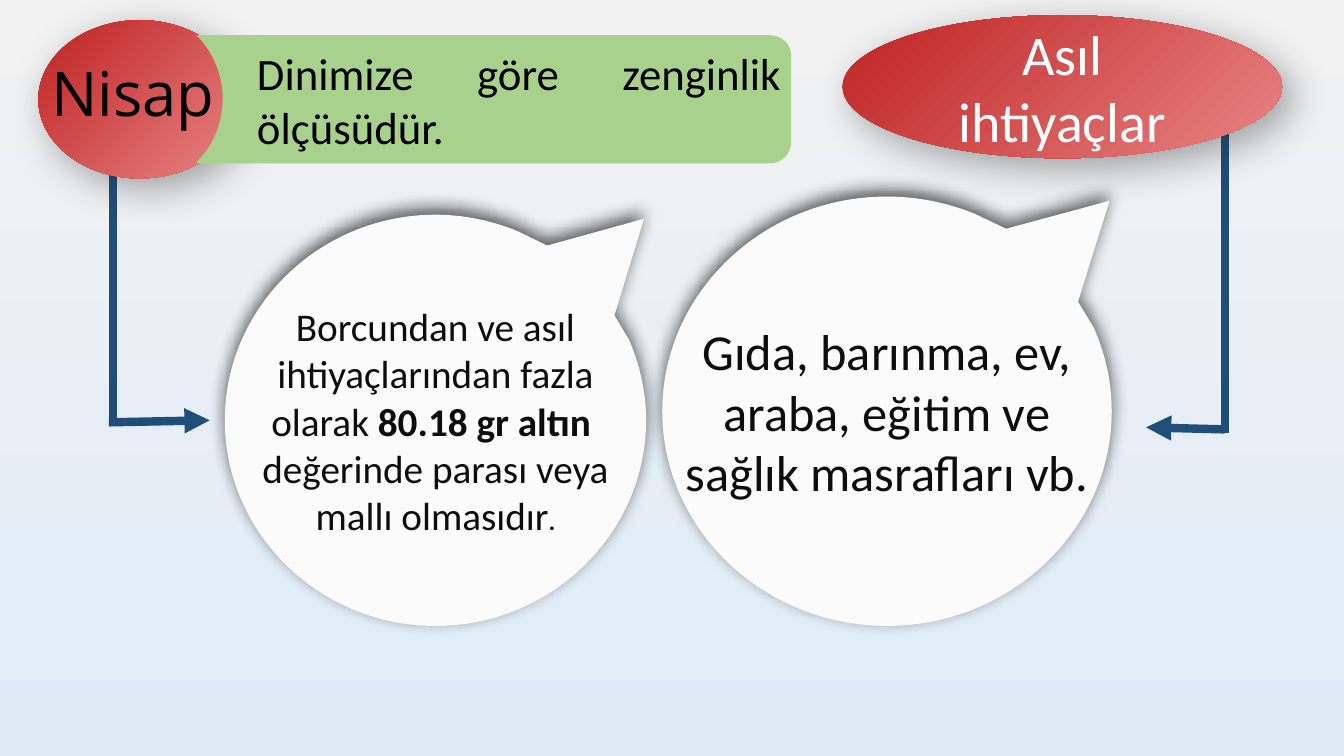
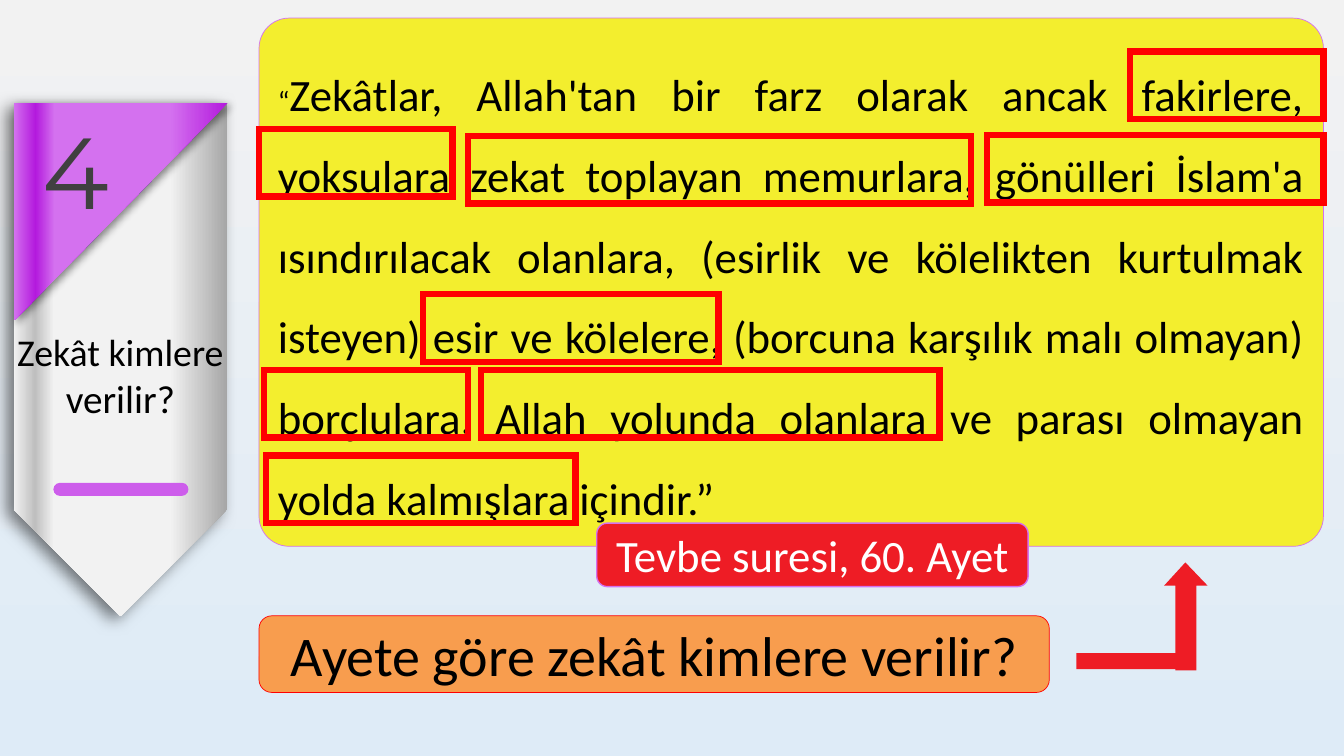
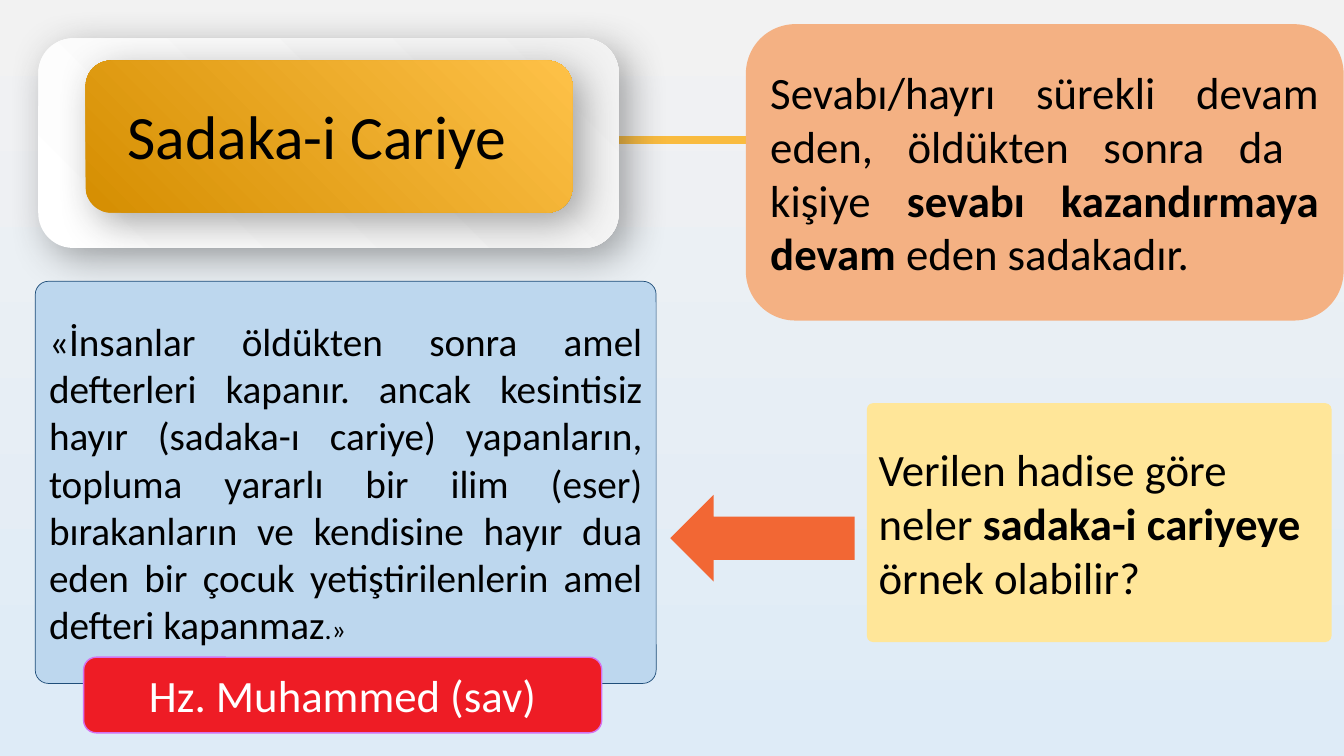
from dataclasses import dataclass

from lxml import etree
from pptx import Presentation
from pptx import util as u
from pptx.dml.color import RGBColor
from pptx.enum import shapes, text
from pptx.oxml import ns

SHAPE = shapes.MSO_SHAPE
ALIGN = text.PP_ALIGN


@dataclass(frozen=True)
class Theme:
    font: str = "Calibri"
    heading_font: str = "Open Sans"
    number_font: str = "Montserrat"
    black: str = "000000"
    white: str = "FFFFFF"
    ink: str = "0D0D0D"
    number: str = "404040"
    navy: str = "1F4E79"
    red: str = "EE1C25"
    highlight: str = "FF0000"
    violet: str = "D471EF"
    dash: str = "CD5DEB"
    balloon: str = "FBFBFB"
    green: str = "A9D18E"
    yellow: str = "F3EE2E"
    orange: str = "F89D4E"
    peach: str = "F4B183"
    blue: str = "BDD7EE"
    cream: str = "FFE699"
    arrow: str = "F26734"
    gold: str = "F9BB3F"
    background: tuple = ((0, "F2F2F2"), (100, "DEEBF7"))
    red_fade: tuple = ((0, "BF2323"), (100, "E88484"))
    white_fade: tuple = ((0, "FFFFFF"), (100, "F2F2F2"))
    gold_fade: tuple = ((0, "D58E01"), (100, "FEC148"))
    silver_fold: tuple = ((0, "A6A6A6"), (27, "F2F2F2"), (81, "F2F2F2"),
                          (90, "BFBFBF"), (100, "F2F2F2"))
    violet_fold: tuple = ((0, "B319DD"), (27, "D471EF"), (81, "D471EF"),
                          (90, "B319DD"), (100, "D471EF"))
    soft_shadow: tuple = ("262626", 40, 28, 10, 45)
    balloon_shadow: tuple = ("000000", 60, 12, 5, 270)
    ribbon_shadow: tuple = ("000000", 50, 12, 6, 150)
    fold_shadow: tuple = ("000000", 46, 6, 3, 45)
    tiny: int = 18
    small: int = 20
    label: int = 27
    body: int = 28
    large: int = 32
    callout: int = 36
    question: int = 40
    title: int = 44
    numeral: int = 72
    thick: float = 6
    frame: float = 4.5


THEME = Theme()


def rgb(color):
    return RGBColor.from_string(color)


def child(parent, tag, **attributes):
    values = {name: str(value) for name, value in attributes.items()}
    return etree.SubElement(parent, ns.qn(tag), values)


def set_gradient(fill, element, stops, angle):
    fill.gradient()
    fill.gradient_angle = angle
    stop_list = element.find(".//" + ns.qn("a:gsLst"))
    for stop in list(stop_list):
        stop_list.remove(stop)
    for position, color in stops:
        stop = child(stop_list, "a:gs", pos=position * 1000)
        child(stop, "a:srgbClr", val=color)


def set_shadow(shape, shadow):
    shape.shadow.inherit = False
    if shadow:
        color, opacity, blur, distance, angle = shadow
        effects = shape.element.spPr.find(ns.qn("a:effectLst"))
        outer = child(effects, "a:outerShdw", blurRad=u.Pt(blur), dist=u.Pt(distance),
                      dir=angle * 60000, algn="ctr", rotWithShape=0)
        child(child(outer, "a:srgbClr", val=color), "a:alpha", val=opacity * 1000)


def style(shape, fill=None, angle=0, line=None, width=0.5, shadow=None):
    if fill is None:
        shape.fill.background()
    elif isinstance(fill, str):
        shape.fill.solid()
        shape.fill.fore_color.rgb = rgb(fill)
    else:
        set_gradient(shape.fill, shape.element.spPr, fill, angle)
    if line:
        shape.line.color.rgb = rgb(line)
        shape.line.width = u.Pt(width)
        child(shape.element.spPr.find(ns.qn("a:ln")), "a:miter", lim=800000)
    else:
        shape.line.fill.background()
    set_shadow(shape, shadow)
    return shape


def add_preset(slide, kind, box, adjust=None, rotation=0, **look):
    shape = slide.shapes.add_shape(kind, *map(u.Inches, box))
    if adjust is not None:
        shape.adjustments[0] = adjust
    shape.rotation = rotation
    return style(shape, **look)


def add_outline(slide, start, steps, **look):
    builder = slide.shapes.build_freeform(*map(u.Inches, start))
    ends = [tuple(map(u.Inches, step[-1])) for step in steps]
    builder.add_line_segments(ends, close=True)
    shape = builder.convert_to_shape()
    segments = list(shape.element.iter(ns.qn("a:lnTo")))
    for segment, step in zip(segments, steps):
        if len(step) == 3:
            curve = etree.Element(ns.qn("a:cubicBezTo"))
            for x, y in step:
                child(curve, "a:pt", x=u.Inches(x) - shape.left, y=u.Inches(y) - shape.top)
            segment.getparent().replace(segment, curve)
    return style(shape, **look)


def write(shape, *runs, color=THEME.black, align=ALIGN.CENTER, font=THEME.font,
          spacing=None, left=0.1, right=0.1):
    frame = shape.text_frame
    frame.word_wrap = True
    frame.margin_left, frame.margin_right = u.Inches(left), u.Inches(right)
    paragraph = frame.paragraphs[0]
    paragraph.alignment = align
    if spacing:
        paragraph.line_spacing = spacing
    for content, size, *bold in runs:
        run = paragraph.add_run()
        run.text = content
        run.font.name = font
        run.font.size = u.Pt(size)
        run.font.bold = bool(bold)
        run.font.color.rgb = rgb(color)


def add_label(slide, box, *runs, **options):
    write(slide.shapes.add_textbox(*map(u.Inches, box)), *runs, **options)


def add_line(slide, start, end, color, arrow=False):
    connector = slide.shapes.add_connector(
        shapes.MSO_CONNECTOR.STRAIGHT, *map(u.Inches, (*start, *end)))
    connector.line.color.rgb = rgb(color)
    connector.line.width = u.Pt(THEME.thick)
    if arrow:
        child(connector.element.spPr.find(ns.qn("a:ln")), "a:tailEnd", type="triangle")
    child(connector.element.spPr, "a:effectLst")


def add_balloon(slide, center, radii, *runs):
    def place(point):
        return tuple(c + r * value for c, r, value in zip(center, radii, point))

    steps = [
        [(-1, -0.55), (-0.55, -1), (0, -1)],
        [(0.14, -1), (0.27, -0.97), (0.39, -0.92)],
        [(0.53, -0.85)], [(0.99, -0.98)], [(0.85, -0.51)], [(0.92, -0.39)],
        [(0.97, -0.27), (1, -0.14), (1, 0)],
        [(1, 0.55), (0.55, 1), (0, 1)],
        [(-0.55, 1), (-1, 0.55), (-1, 0)],
    ]
    balloon = add_outline(slide, place((-1, 0)),
                          [[place(point) for point in step] for step in steps],
                          fill=THEME.balloon, shadow=THEME.balloon_shadow)
    write(balloon, *runs, color=THEME.ink, left=0.15, right=0.15)


def add_red_ellipse(slide, box):
    return add_preset(slide, SHAPE.OVAL, box, fill=THEME.red_fade, angle=315,
                      shadow=THEME.soft_shadow)


def add_source_tag(slide, box, content):
    tag = add_preset(slide, SHAPE.ROUNDED_RECTANGLE, box, fill=THEME.red,
                     line=THEME.violet, width=1)
    write(tag, (content, THEME.large), color=THEME.white)


def add_panel(slide, box, *runs, adjust=None, fill=None, line=None, **options):
    panel = add_preset(slide, SHAPE.ROUNDED_RECTANGLE, box, adjust, fill=fill, line=line)
    write(panel, *runs, **options)


def build_nisap(slide):
    add_balloon(slide, (4.32, 4.17), (2.09, 2.04),
                ("Borcundan ve asıl ihtiyaçlarından fazla olarak ", THEME.body),
                ("80.18 gr altın  ", THEME.body, True),
                ("değerinde parası veya mallı olmasıdır", THEME.body),
                (".", THEME.tiny, True))
    add_line(slide, (1.12, 0.98), (1.12, 4.19), THEME.navy)
    add_line(slide, (1.08, 4.19), (2.08, 4.17), THEME.navy, arrow=True)
    add_red_ellipse(slide, (0.38, 0.2, 2.01, 1.57))
    add_label(slide, (0.32, 0.5, 2, 0.84), ("Nisap", THEME.title), font=THEME.heading_font)
    banner = add_outline(
        slide, (1.95, 0.35),
        [[(7.64, 0.35)],
         [(7.76, 0.35), (7.85, 0.44), (7.85, 0.56)],
         [(7.85, 1.41)],
         [(7.85, 1.52), (7.76, 1.62), (7.64, 1.62)],
         [(1.95, 1.62)],
         [(1.95, 1.61)],
         [(2.11, 1.45), (2.21, 1.23), (2.21, 0.98)],
         [(2.21, 0.74), (2.11, 0.51), (1.95, 0.35)]],
        fill=THEME.green)
    write(banner, ("Dinimize göre zenginlik ölçüsüdür.", THEME.large),
          align=ALIGN.JUSTIFY, left=0.6)
    add_balloon(slide, (8.8, 4.08), (2.23, 2.13),
                ("Gıda, barınma, ev, araba, eğitim ve sağlık masrafları vb.", THEME.callout))
    add_line(slide, (12.15, 1.1), (12.15, 4.3), THEME.navy)
    add_line(slide, (12.15, 4.26), (11.37, 4.24), THEME.navy, arrow=True)
    needs = add_red_ellipse(slide, (8.36, 0.15, 4.36, 1.42))
    write(needs, ("Asıl ihtiyaçlar", THEME.question), color=THEME.white, left=0.3, right=0.3)


def build_recipients(slide):
    add_preset(slide, SHAPE.PENTAGON, (-1.35, 2.51, 5.09, 2.12), rotation=90,
               fill=THEME.silver_fold, angle=270, shadow=THEME.ribbon_shadow)
    add_preset(slide, SHAPE.RIGHT_TRIANGLE, (0.12, 1.04, 2.16, 2.12), rotation=90,
               fill=THEME.violet_fold, angle=270, shadow=THEME.fold_shadow)
    add_preset(slide, SHAPE.ROUNDED_RECTANGLE, (0.53, 4.79, 1.34, 0.13), 0.5,
               fill=THEME.dash)
    add_label(slide, (0.32, 1.03, 0.98, 1.31), ("4", THEME.numeral), color=THEME.number,
              align=ALIGN.LEFT, font=THEME.number_font)
    add_label(slide, (-0.02, 3.21, 2.43, 1.04),
              ("Zekât kimlere ", THEME.label), ("verilir?", THEME.body))
    add_panel(slide, (2.57, 0.18, 10.56, 5.24),
              ("“", THEME.small),
              ("Zekâtlar, Allah'tan bir farz olarak ancak fakirlere, yoksulara zekat "
               "toplayan memurlara, gönülleri İslam'a ısındırılacak olanlara, (esirlik ve "
               "kölelikten kurtulmak isteyen) esir ve kölelere, (borcuna karşılık malı "
               "olmayan) borçlulara, Allah yolunda olanlara ve parası olmayan yolda "
               "kalmışlara içindir.” ", THEME.large),
              adjust=0.057, fill=THEME.yellow, line=THEME.violet,
              align=ALIGN.JUSTIFY, spacing=1.5)
    add_source_tag(slide, (5.92, 5.19, 4.28, 0.63), "Tevbe suresi, 60. Ayet")
    add_panel(slide, (2.57, 6.11, 7.84, 0.76),
              ("Ayete göre zekât kimlere verilir?", THEME.question),
              fill=THEME.orange, line=THEME.highlight)
    arrow_corners = [(11.98, 5.81), (11.87, 5.81), (11.87, 6.65), (11.66, 6.65),
                     (11.66, 6.64), (10.68, 6.64), (10.68, 6.48), (11.66, 6.48),
                     (11.66, 5.81), (11.55, 5.81)]
    add_outline(slide, (11.76, 5.58), [[corner] for corner in arrow_corners],
                fill=THEME.red)
    highlights = [(11.21, 0.51, 1.92), (2.57, 1.28, 1.92), (4.64, 1.35, 4.99),
                  (9.79, 1.34, 3.34), (4.2, 2.92, 2.93), (2.62, 3.67, 2.02),
                  (4.77, 3.67, 4.55), (2.64, 4.52, 3.07)]
    for left, top, width in highlights:
        add_preset(slide, SHAPE.RECTANGLE, (left, top, width, 0.67),
                   line=THEME.highlight, width=THEME.frame)


def build_lasting_charity(slide):
    add_line(slide, (5.45, 1.39), (7.97, 1.39), THEME.gold)
    plates = [((0.38, 0.38, 5.76, 2.08), THEME.white_fade),
              ((0.85, 0.6, 4.83, 1.51), THEME.gold_fade)]
    for box, fade in plates:
        add_preset(slide, SHAPE.ROUNDED_RECTANGLE, box, fill=fade, angle=45,
                   shadow=THEME.soft_shadow)
    add_label(slide, (0.8, 0.92, 4.69, 0.84), ("Sadaka-i Cariye", THEME.title))
    add_panel(slide, (7.4, 0.24, 5.93, 2.94),
              ("Sevabı/hayrı sürekli devam eden, öldükten sonra da  kişiye ", THEME.large),
              ("sevabı kazandırmaya devam ", THEME.large, True),
              ("eden sadakadır.", THEME.large),
              fill=THEME.peach, align=ALIGN.JUSTIFY)
    add_panel(slide, (0.35, 2.79, 6.16, 3.99),
              ("«İnsanlar öldükten sonra amel defterleri kapanır. ancak kesintisiz hayır "
               "(sadaka-ı cariye) yapanların, topluma yararlı bir ilim (eser) bırakanların "
               "ve kendisine hayır dua eden bir çocuk yetiştirilenlerin amel defteri "
               "kapanmaz", THEME.body),
              (".»", THEME.small),
              adjust=0.033, fill=THEME.blue, line=THEME.navy, align=ALIGN.JUSTIFY)
    add_source_tag(slide, (0.83, 6.52, 5.14, 0.75), "Hz. Muhammed (sav)")
    add_panel(slide, (8.6, 4, 4.61, 2.37),
              ("Verilen hadise göre neler ", THEME.large),
              ("sadaka-i cariyeye ", THEME.large, True),
              ("örnek olabilir?", THEME.large),
              adjust=0.026, fill=THEME.cream, align=ALIGN.LEFT)
    add_preset(slide, SHAPE.LEFT_ARROW, (6.65, 4.91, 1.83, 0.86), fill=THEME.arrow)


def main():
    presentation = Presentation()
    presentation.slide_width = u.Inches(40 / 3)
    presentation.slide_height = u.Inches(7.5)
    master = presentation.slide_master
    set_gradient(master.background.fill, master.element, THEME.background, 270)
    blank = presentation.slide_layouts[6]
    for build in (build_nisap, build_recipients, build_lasting_charity):
        build(presentation.slides.add_slide(blank))
    presentation.save("out.pptx")


if __name__ == "__main__":
    main()
